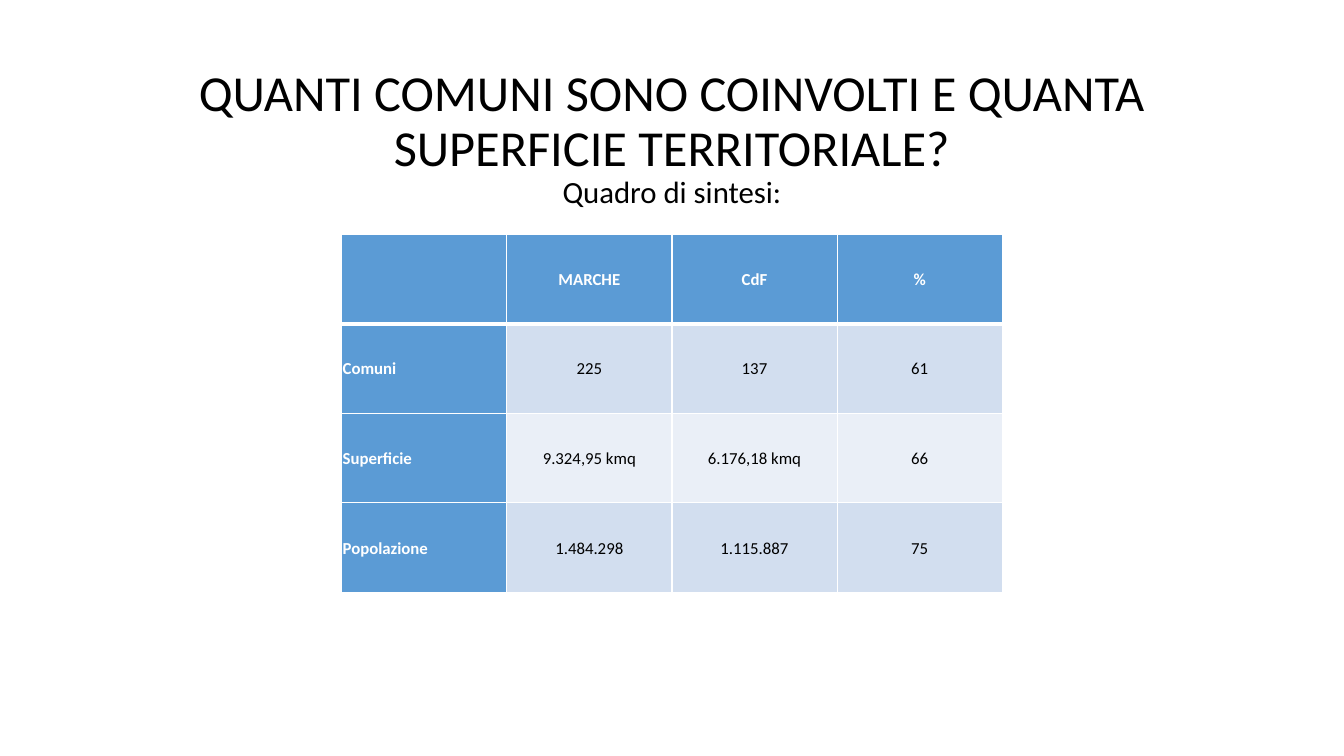
from typing import NamedTuple

from lxml.etree import SubElement
from pptx import Presentation
from pptx.dml.color import RGBColor
from pptx.enum.text import MSO_ANCHOR, MSO_AUTO_SIZE, PP_ALIGN
from pptx.oxml.ns import qn
from pptx.util import Pt

FONT = "Calibri"
BLACK, WHITE, BLUE = "000000", "FFFFFF", "5B9BD5"
BANDS = ("D2DEEF", "EAEFF7")
TITLE_SIZE, SUBTITLE_SIZE, CELL_SIZE = 36, 22, 12
COLUMN_WIDTH, ROW_HEIGHT = 118, 64
CELL_INSET = 0.75


class Row(NamedTuple):
    label: str
    marche: str
    cdf: str
    percent: str


ROWS = (
    Row("", "MARCHE", "CdF", "%"),
    Row("Comuni", "225", "137", "61"),
    Row("Superficie", "9.324,95 kmq", "6.176,18 kmq", "66"),
    Row("Popolazione", "1.484.298", "1.115.887", "75"),
)


def color(value: str) -> RGBColor:
    return RGBColor.from_string(value)


def add_run(paragraph, text: str, size: float, ink: str, bold: bool = False) -> None:
    run = paragraph.add_run()
    run.text = text
    run.font.name = FONT
    run.font.size = Pt(size)
    run.font.bold = bold
    run.font.color.rgb = color(ink)


def add_border(cell, side: str, width: float) -> None:
    line = SubElement(cell._tc.get_or_add_tcPr(), qn(f"a:ln{side}"), w=str(Pt(width)))
    fill = SubElement(line, qn("a:solidFill"))
    SubElement(fill, qn("a:srgbClr"), val=WHITE)


def write_title(slide) -> None:
    title = slide.shapes.title
    title.left, title.top, title.width, title.height = Pt(120), Pt(31), Pt(720), Pt(123)
    frame = title.text_frame
    frame.word_wrap = True
    frame.auto_size = MSO_AUTO_SIZE.NONE
    frame.vertical_anchor = MSO_ANCHOR.BOTTOM
    paragraph = frame.paragraphs[0]
    paragraph.alignment = PP_ALIGN.CENTER
    paragraph.line_spacing = 0.9
    add_run(paragraph, "QUANTI COMUNI SONO COINVOLTI E QUANTA SUPERFICIE TERRITORIALE?",
            TITLE_SIZE, BLACK)
    paragraph.add_line_break()
    line_break = paragraph._p.find(qn("a:br"))
    SubElement(line_break, qn("a:rPr"), sz=str(TITLE_SIZE * 100))
    add_run(paragraph, "Quadro di sintesi:", SUBTITLE_SIZE, BLACK)


def format_cell(cell, text: str, row: int, column: int) -> None:
    is_heading = row == 0 or column == 0
    cell.margin_left = cell.margin_right = Pt(CELL_INSET)
    cell.margin_top = cell.margin_bottom = Pt(CELL_INSET)
    cell.vertical_anchor = MSO_ANCHOR.MIDDLE
    add_border(cell, "L", 1)
    add_border(cell, "R", 1)
    add_border(cell, "T", 3 if row == 1 else 1)
    add_border(cell, "B", 3 if row == 0 else 1)
    cell.fill.solid()
    cell.fill.fore_color.rgb = color(BLUE if is_heading else BANDS[(row - 1) % 2])
    if text:
        paragraph = cell.text_frame.paragraphs[0]
        paragraph.alignment = PP_ALIGN.CENTER if column else PP_ALIGN.LEFT
        paragraph.line_spacing = 1.07
        add_run(paragraph, text, CELL_SIZE, WHITE if is_heading else BLACK, is_heading)


def add_summary(slide) -> None:
    column_count = len(Row._fields)
    summary = slide.shapes.add_table(
        len(ROWS), column_count, Pt(244), Pt(167.25),
        Pt(COLUMN_WIDTH * column_count), Pt(ROW_HEIGHT * len(ROWS))).table
    summary.first_col = True
    for row, values in enumerate(ROWS):
        for column, text in enumerate(values):
            format_cell(summary.cell(row, column), text, row, column)


def main() -> None:
    presentation = Presentation()
    presentation.slide_width, presentation.slide_height = Pt(960), Pt(540)
    title_only = presentation.slide_layouts.get_by_name("Title Only")
    slide = presentation.slides.add_slide(title_only)
    write_title(slide)
    add_summary(slide)
    presentation.save("out.pptx")


if __name__ == "__main__":
    main()
